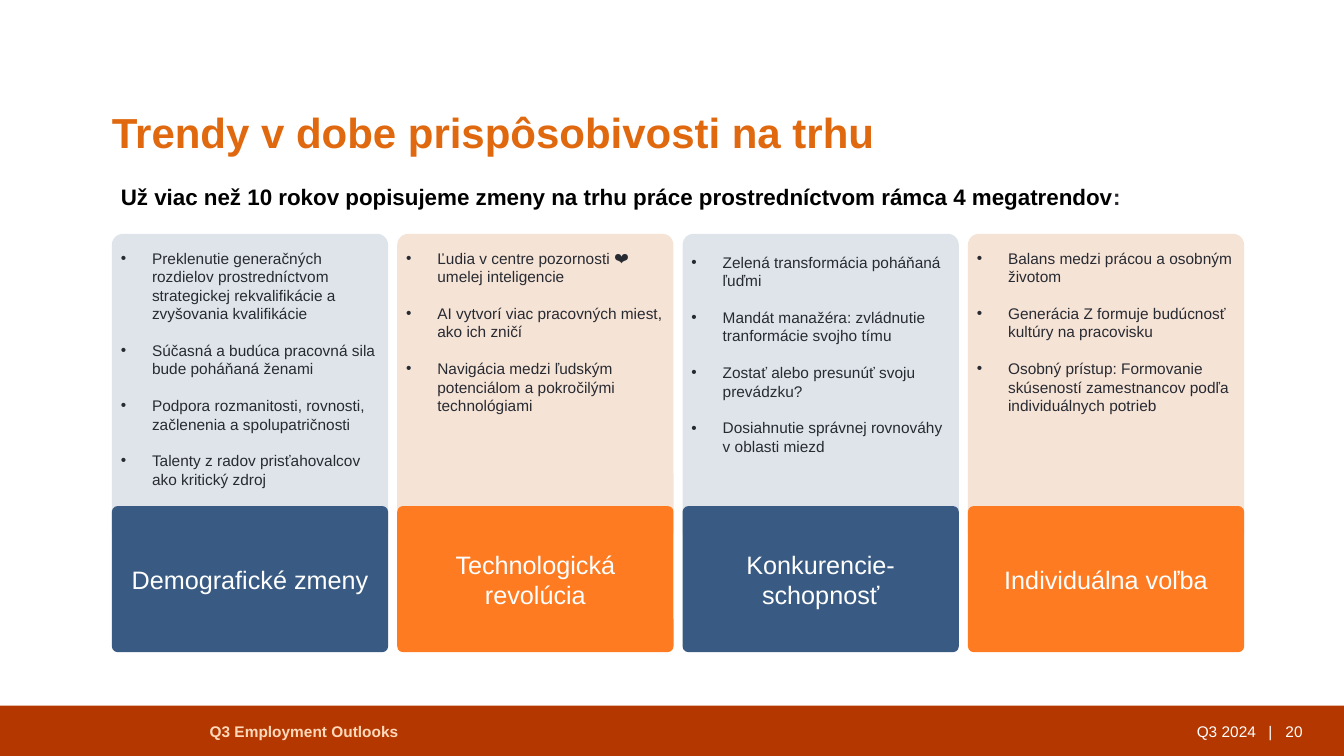
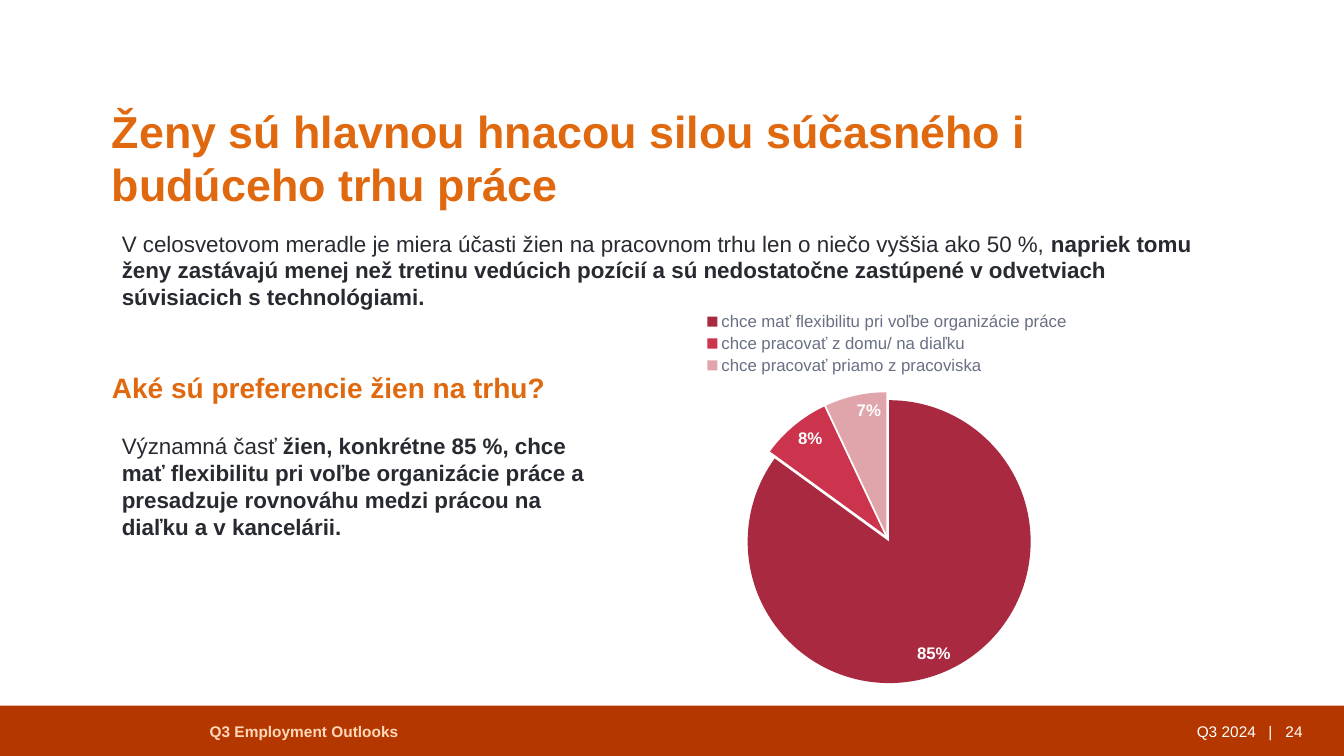
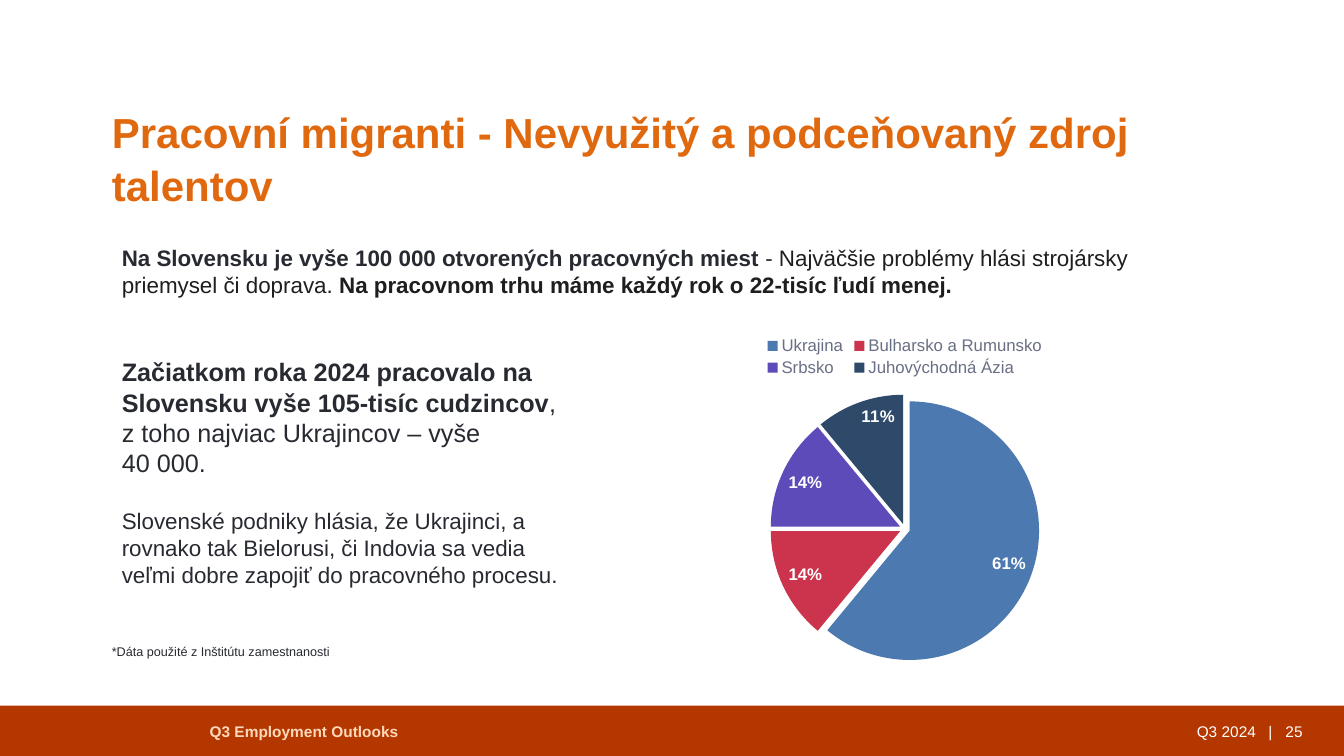
"""Build three slides on labour market trends for the third quarter of 2024."""
from dataclasses import dataclass

from lxml.etree import SubElement
from pptx import Presentation
from pptx.chart.data import CategoryChartData
from pptx.dml.color import RGBColor
from pptx.enum.chart import XL_CHART_TYPE, XL_LABEL_POSITION, XL_LEGEND_POSITION
from pptx.enum.shapes import MSO_SHAPE
from pptx.enum.text import MSO_ANCHOR, PP_ALIGN
from pptx.oxml.ns import qn
from pptx.util import Inches, Pt

FONT = "Arial"
INK = "282A32"
BLACK = "000000"
CHARCOAL = "1E1E1E"
WHITE = "FFFFFF"
ACCENT = "E0690F"
BAND = "B43700"
BAND_TEXT = "FFD8BA"
LEGEND = "696F84"
NAVY = "395B83"
ORANGE = "FE7B21"
RUST = "C25700"
CRIMSON = "CC334D"
LEFT = 1.11
MARGIN = 0.1
CARD_STEP = 2.83
CARD_WIDTH = 2.74
BULLET_INDENT = 0.31


@dataclass
class Span:
    text: str
    size: float = 16
    color: str = INK
    bold: bool = False


@dataclass
class Para:
    spans: list[Span]
    before: float = 0
    bullet: bool = False
    line: float | None = None
    align: PP_ALIGN = PP_ALIGN.LEFT
    tabs: tuple[float, ...] = ()


@dataclass
class Box:
    left: float
    top: float
    width: float
    height: float


@dataclass
class Trend:
    name: str
    color: str
    tint: str
    points: list[str]
    text_top: float = 2.42


@dataclass
class Slice:
    name: str
    value: int
    color: str


def rgb(color: str) -> RGBColor:
    return RGBColor.from_string(color)


def write(frame, paras: list[Para]) -> None:
    frame.word_wrap = True
    for index, para in enumerate(paras):
        paragraph = frame.paragraphs[0] if index == 0 else frame.add_paragraph()
        properties = paragraph._p.get_or_add_pPr()
        if para.bullet:
            indent = Inches(BULLET_INDENT)
            properties.set("marL", str(indent))
            properties.set("indent", str(-indent))
            SubElement(properties, qn("a:buFont"), typeface=FONT)
            SubElement(properties, qn("a:buChar"), char="•")
        if para.tabs:
            stops = SubElement(properties, qn("a:tabLst"))
            for stop in para.tabs:
                SubElement(stops, qn("a:tab"), pos=str(Inches(stop)), algn="l")
        paragraph.alignment = para.align
        if para.before:
            paragraph.space_before = Pt(para.before)
        if para.line:
            paragraph.line_spacing = Pt(para.line)
        for span in para.spans:
            run = paragraph.add_run()
            run.text = span.text
            run.font.name = FONT
            run.font.size = Pt(span.size)
            run.font.bold = span.bold
            run.font.color.rgb = rgb(span.color)


def place(box: Box) -> tuple:
    return tuple(Inches(n) for n in (box.left, box.top, box.width, box.height))


def add_text(page, box: Box, paras: list[Para], inset: bool = True,
             anchor: MSO_ANCHOR = MSO_ANCHOR.TOP) -> None:
    frame = page.shapes.add_textbox(*place(box)).text_frame
    frame.vertical_anchor = anchor
    if not inset:
        frame.margin_left = frame.margin_right = 0
        frame.margin_top = frame.margin_bottom = 0
    write(frame, paras)


def add_block(page, box: Box, color: str, rounded: bool = True, opacity: int = 100):
    kind = MSO_SHAPE.ROUNDED_RECTANGLE if rounded else MSO_SHAPE.RECTANGLE
    shape = page.shapes.add_shape(kind, *place(box))
    shape.shadow.inherit = False
    shape.fill.solid()
    shape.fill.fore_color.rgb = rgb(color)
    shape.line.fill.background()
    if rounded:
        shape.adjustments[0] = 0.04
    if opacity < 100:
        tone = shape._element.spPr.find(qn("a:solidFill"))[0]
        SubElement(tone, qn("a:alpha"), val=str(opacity * 1000))
    return shape


def add_heading(page, box: Box, text: str, size: float) -> None:
    add_text(page, box, [Para([Span(text, size, ACCENT, True)], line=38)], inset=False)


def add_page(deck, title: str, number: int, size: float = 30, width: float = 11.1):
    page = deck.slides.add_slide(deck.slide_layouts[6])
    add_block(page, Box(0, 7, 13.33, 0.5), BAND, rounded=False)
    add_text(page, Box(2.08, 7.16, 4, 0.19),
             [Para([Span("Q3 Employment Outlooks", 11, BAND_TEXT, True)])],
             inset=False, anchor=MSO_ANCHOR.MIDDLE)
    add_text(page, Box(11.87, 7.16, 1.1, 0.19),
             [Para([Span(f"Q3 2024\t|\t{number}", 11, WHITE)], tabs=(0.71, 0.88))],
             inset=False, anchor=MSO_ANCHOR.MIDDLE)
    add_heading(page, Box(LEFT, 1.03, width, 0.5), title, size)
    return page


def add_trend(page, index: int, trend: Trend) -> None:
    left = LEFT + index * CARD_STEP
    add_block(page, Box(left, 2.32, CARD_WIDTH, 3.07), trend.tint, opacity=16)
    label = add_block(page, Box(left, 5.02, CARD_WIDTH, 1.45), trend.color)
    label.text_frame.vertical_anchor = MSO_ANCHOR.MIDDLE
    write(label.text_frame, [Para([Span(trend.name, 18, WHITE)], align=PP_ALIGN.CENTER)])
    add_text(page, Box(left - 0.01, trend.text_top, 2.76, 2.5),
             [Para([Span(point, 11)], before=13 if row else 0, bullet=True)
              for row, point in enumerate(trend.points)])


def add_pie(page, box: Box, slices: list[Slice], explosion: int) -> None:
    data = CategoryChartData()
    data.categories = [part.name for part in slices]
    data.add_series("Series 1", [part.value for part in slices])
    chart = page.shapes.add_chart(XL_CHART_TYPE.PIE, *place(box), data).chart
    chart.has_title = False
    chart.font.name = FONT
    chart.font.size = Pt(10)
    chart.font.color.rgb = rgb(INK)
    chart.has_legend = True
    legend = chart.legend
    legend.position = XL_LEGEND_POSITION.TOP
    legend.include_in_layout = False
    legend.font.name = FONT
    legend.font.size = Pt(12)
    legend.font.color.rgb = rgb(LEGEND)
    plot = chart.plots[0]
    plot.vary_by_categories = True
    series = plot.series[0]
    for index, part in enumerate(slices):
        fill = series.points[index].format.fill
        fill.solid()
        fill.fore_color.rgb = rgb(part.color)
    element = series._element
    spread = SubElement(element, qn("c:explosion"), val=str(explosion))
    element.find(qn("c:dPt")).addprevious(spread)
    labels = series.data_labels
    labels.show_value = False
    labels.show_percentage = True
    labels.number_format = "0%"
    labels.number_format_is_linked = False
    labels.position = XL_LABEL_POSITION.INSIDE_END
    labels.font.name = FONT
    labels.font.size = Pt(12)
    labels.font.bold = True
    labels.font.color.rgb = rgb(WHITE)


def build_trends(deck) -> None:
    page = add_page(deck, "Trendy v dobe prispôsobivosti na trhu", 20)
    trends = [
        Trend("Demografické zmeny", NAVY, NAVY, [
            "Preklenutie generačných rozdielov prostredníctvom strategickej "
            "rekvalifikácie a zvyšovania kvalifikácie",
            "Súčasná a budúca pracovná sila bude poháňaná ženami",
            "Podpora rozmanitosti, rovnosti, začlenenia a spolupatričnosti",
            "Talenty z radov prisťahovalcov ako kritický zdroj"]),
        Trend("Technologická revolúcia", ORANGE, RUST, [
            "Ľudia v centre pozornosti ❤ umelej inteligencie",
            "AI vytvorí viac pracovných miest, ako ich zničí",
            "Navigácia medzi ľudským potenciálom a pokročilými technológiami"]),
        Trend("Konkurencie-schopnosť", NAVY, NAVY, [
            "Zelená transformácia poháňaná ľuďmi",
            "Mandát manažéra: zvládnutie tranformácie svojho tímu",
            "Zostať alebo presunúť svoju prevádzku?",
            "Dosiahnutie správnej rovnováhy v oblasti miezd"], 2.46),
        Trend("Individuálna voľba", ORANGE, RUST, [
            "Balans medzi prácou a osobným životom",
            "Generácia Z formuje budúcnosť kultúry na pracovisku",
            "Osobný prístup: Formovanie skúseností zamestnancov podľa "
            "individuálnych potrieb"]),
    ]
    for index, trend in enumerate(trends):
        add_trend(page, index, trend)
    add_text(page, Box(1.1, 1.77, 10.26, 0.37), [Para([
        Span("Už viac než 10 rokov popisujeme zmeny na trhu práce prostredníctvom "
             "rámca 4 megatrendov", color=BLACK, bold=True),
        Span(":", bold=True)])])


def build_women(deck) -> None:
    page = add_page(deck, "Ženy sú hlavnou hnacou silou súčasného i budúceho trhu práce",
                    24, size=32, width=10.2)
    add_text(page, Box(LEFT, 2.23, 10.97, 0.91), [Para([
        Span("V celosvetovom meradle je miera účasti žien na pracovnom trhu len o niečo "
             "vyššia ako 50 %, "),
        Span("napriek tomu ženy zastávajú menej než tretinu vedúcich pozícií a sú "
             "nedostatočne zastúpené v odvetviach súvisiacich s technológiami.",
             bold=True)])])
    add_heading(page, Box(LEFT, 3.48, 10.2, 0.66), "Aké sú preferencie žien na trhu?", 20)
    add_pie(page, Box(5.38, 2.99, 6.84, 3.93), [
        Slice("chce mať flexibilitu pri voľbe organizácie práce", 85, "A92A40"),
        Slice("chce pracovať z domu/ na diaľku", 8, CRIMSON),
        Slice("chce pracovať priamo z pracoviska", 7, "E0A5AA")], explosion=3)
    add_text(page, Box(LEFT, 4.24, 4.94, 1.18), [Para([
        Span("Významná časť "),
        Span("žien, konkrétne 85 %, chce mať flexibilitu pri voľbe organizácie práce "
             "a presadzuje rovnováhu medzi prácou na diaľku a v kancelárii.",
             bold=True)])])


def build_migrants(deck) -> None:
    page = add_page(
        deck, "Pracovní migranti - Nevyužitý a podceňovaný zdroj talentov", 25)
    add_text(page, Box(LEFT, 2.37, 10.71, 0.64), [Para([
        Span("Na Slovensku je vyše 100 000 otvorených pracovných miest ", bold=True),
        Span("- "),
        Span("Najväčšie problémy hlási strojársky priemysel či doprava. ",
             color=CHARCOAL),
        Span("Na pracovnom trhu máme každý rok o 22-tisíc ľudí menej.",
             color=CHARCOAL, bold=True)])])
    add_text(page, Box(LEFT, 3.49, 4.56, 2.42), [
        Para([Span("Začiatkom roka 2024 pracovalo na Slovensku vyše 105-tisíc cudzincov",
                   18, bold=True),
              Span(", z toho najviac Ukrajincov – vyše", 18)]),
        Para([Span("40 000.", 18)]),
        Para([Span("Slovenské podniky hlásia, že Ukrajinci, a rovnako tak Bielorusi, či "
                   "Indovia sa vedia veľmi dobre zapojiť do pracovného procesu.")],
             before=21)])
    add_text(page, Box(LEFT, 6.39, 7.86, 0.15),
             [Para([Span("*Dáta použité z Inštitútu zamestnanosti", 9)])], inset=False)
    add_pie(page, Box(6.51, 3.23, 4.93, 3.49), [
        Slice("Ukrajina", 61, "4C79AF"),
        Slice("Bulharsko a Rumunsko", 14, CRIMSON),
        Slice("Srbsko", 14, "5C4BB9"),
        Slice("Juhovýchodná Ázia", 11, "2E4969")], explosion=4)


def main() -> None:
    deck = Presentation()
    deck.slide_width = Inches(13.33)
    deck.slide_height = Inches(7.5)
    build_trends(deck)
    build_women(deck)
    build_migrants(deck)
    deck.save("out.pptx")


if __name__ == "__main__":
    main()
